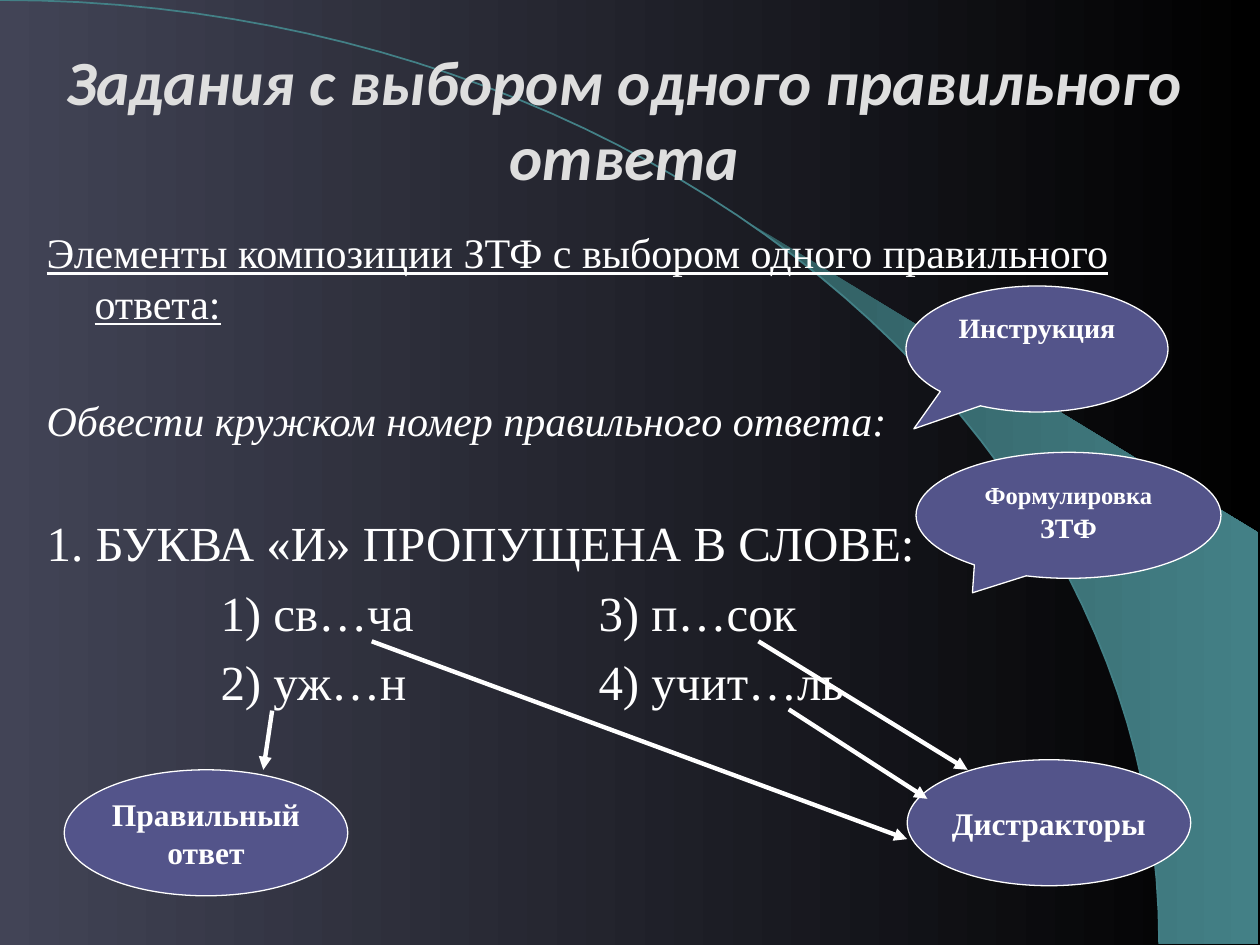
"""Build a slide on multiple-choice tasks with one correct answer."""
from lxml.etree import SubElement
from pptx import Presentation
from pptx.dml.color import RGBColor
from pptx.enum.shapes import MSO_CONNECTOR, MSO_SHAPE
from pptx.enum.text import MSO_ANCHOR, MSO_AUTO_SIZE, PP_ALIGN
from pptx.oxml.ns import qn
from pptx.util import Inches, Pt

WHITE = RGBColor(0xFF, 0xFF, 0xFF)
BLACK = RGBColor(0, 0, 0)
SLATE = RGBColor(0x42, 0x44, 0x56)
SILVER = RGBColor(0xDE, 0xDE, 0xDE)
VIOLET = RGBColor(0x53, 0x54, 0x8A)
TEAL = RGBColor(0x43, 0x80, 0x86)
DARK_TEAL = RGBColor(0x30, 0x5C, 0x60)

TITLE = "Задания с выбором одного правильного ответа"
BODY = [
    ("Элементы композиции ЗТФ с выбором одного правильного ответа:",
     dict(size=24, underline=True, before=5)),
    ("Обвести кружком номер правильного ответа:", dict(size=24, italic=True, before=38.5)),
    ("1. БУКВА «И» ПРОПУЩЕНА В СЛОВЕ:", dict(size=28, before=38.5)),
    ("\t\t1) св…ча\t\t3) п…сок", dict(size=28, before=6.5)),
    ("\t\t2) уж…н\t\t4) учит…ль", dict(size=28, before=5.5)),
]
CALLOUTS = [
    ((7.19, 2.27, 2.08, 1), (-0.47, 0.634), [("Инструкция", 16)]),
    ((7.27, 3.59, 2.42, 1), (-0.315, 0.615), [("Формулировка", 14), (" ЗТФ", 16)]),
]
ELLIPSES = [
    ((0.51, 6.11, 2.25, 1), ["Правильный", "ответ"]),
    ((7.2, 6.03, 2.25, 1), ["Дистракторы"]),
]
ARROWS = [
    ((2.16, 5.64), (2.09, 6.11)),
    ((2.95, 5.09), (7.2, 6.66)),
    ((6.26, 5.63), (7.36, 6.34)),
    ((6.02, 5.09), (7.68, 6.11)),
]
ARC = [(0, 0), (5.08, 0), (9.2, 3.35), (9.2, 7.49)]
WEDGE_START = 0.44
WEDGE_CORNERS = [(9.99, 7.49), (9.99, 4.23)]


def write(para, text, size, font="Times New Roman", color=WHITE, bold=False,
          italic=False, underline=False, align=PP_ALIGN.CENTER, before=0):
    para.alignment = align
    para.space_before = Pt(before)
    span = para.add_run()
    span.text = text
    span.font.name = font
    span.font.size = Pt(size)
    span.font.color.rgb = color
    span.font.bold, span.font.italic, span.font.underline = bold, italic, underline


def paragraphs(frame, count):
    return [frame.paragraphs[0]] + [frame.add_paragraph() for _ in range(count - 1)]


def place(shape, box):
    shape.left, shape.top, shape.width, shape.height = map(Inches, box)


def paint_gradient(fill, first, last):
    fill.gradient()
    fill.gradient_angle = 0
    for stop, color in zip(fill.gradient_stops, (first, last)):
        stop.color.rgb = color


def arc_points(start, steps=48):
    points = []
    for step in range(steps + 1):
        t = start + (1 - start) * step / steps
        weights = ((1 - t) ** 3, 3 * t * (1 - t) ** 2, 3 * t * t * (1 - t), t ** 3)
        points.append(tuple(sum(w * p[axis] for w, p in zip(weights, ARC)) for axis in (0, 1)))
    return points


def add_outline(page, points, close):
    points = [(Inches(x), Inches(y)) for x, y in points]
    builder = page.shapes.build_freeform(*points[0], scale=1.0)
    builder.add_line_segments(points[1:], close=close)
    shape = builder.convert_to_shape()
    shape.shadow.inherit = False
    return shape


def add_bubble(page, kind, box):
    shape = page.shapes.add_shape(kind, *map(Inches, box))
    shape.shadow.inherit = False
    shape.fill.solid()
    shape.fill.fore_color.rgb = VIOLET
    shape.line.color.rgb = WHITE
    shape.line.width = Pt(0.75)
    return shape


def add_arrow(page, start, end):
    arrow = page.shapes.add_connector(MSO_CONNECTOR.STRAIGHT, *map(Inches, start + end))
    arrow.line.color.rgb = WHITE
    arrow.line.width = Pt(2.5)
    SubElement(arrow.line._get_or_add_ln(), qn("a:tailEnd"), type="triangle")
    SubElement(arrow.element.spPr, qn("a:effectLst"))


def add_backdrop(page):
    paint_gradient(page.background.fill, SLATE, BLACK)
    wedge = add_outline(page, arc_points(WEDGE_START) + WEDGE_CORNERS, True)
    paint_gradient(wedge.fill, DARK_TEAL, TEAL)
    wedge.line.fill.background()
    arc = add_outline(page, arc_points(0), False)
    arc.fill.background()
    arc.line.color.rgb = TEAL
    arc.line.width = Pt(1)


def fill_placeholders(page):
    title, body = page.placeholders
    for holder in (title, body):
        holder.element.getparent().append(holder.element)
        holder.text_frame.auto_size = MSO_AUTO_SIZE.NONE
        holder.text_frame.word_wrap = True
    place(title, (0.23, 0.31, 9.45, 1.25))
    title.text_frame.vertical_anchor = MSO_ANCHOR.MIDDLE
    write(title.text_frame.paragraphs[0], TITLE, 36, font="Calibri", color=SILVER,
          bold=True, italic=True)
    place(body, (0.27, 1.75, 9.23, 5.54))
    body.text_frame.vertical_anchor = MSO_ANCHOR.TOP
    for para, (text, look) in zip(paragraphs(body.text_frame, len(BODY)), BODY):
        write(para, text, align=PP_ALIGN.LEFT, **look)
        properties = para._p.get_or_add_pPr()
        properties.set("marL", str(Inches(0.38)))
        properties.set("indent", str(Inches(-0.38)))
        properties.set("defTabSz", str(Inches(1)))
        SubElement(properties, qn("a:buNone"))


def main():
    deck = Presentation()
    deck.slide_width, deck.slide_height = Inches(10), Inches(7.5)
    page = deck.slides.add_slide(deck.slide_layouts[1])
    add_backdrop(page)
    fill_placeholders(page)
    for box, tip, spans in CALLOUTS:
        callout = add_bubble(page, MSO_SHAPE.OVAL_CALLOUT, box)
        callout.adjustments[0], callout.adjustments[1] = tip
        callout.text_frame.word_wrap = True
        callout.text_frame.vertical_anchor = MSO_ANCHOR.TOP
        for text, size in spans:
            write(callout.text_frame.paragraphs[0], text, size, bold=True)
    for box, lines in ELLIPSES:
        frame = add_bubble(page, MSO_SHAPE.OVAL, box).text_frame
        frame.word_wrap = False
        frame.vertical_anchor = MSO_ANCHOR.MIDDLE
        for para, line in zip(paragraphs(frame, len(lines)), lines):
            write(para, line, 18, bold=True)
    for start, end in ARROWS:
        add_arrow(page, start, end)
    deck.save("out.pptx")


if __name__ == "__main__":
    main()
